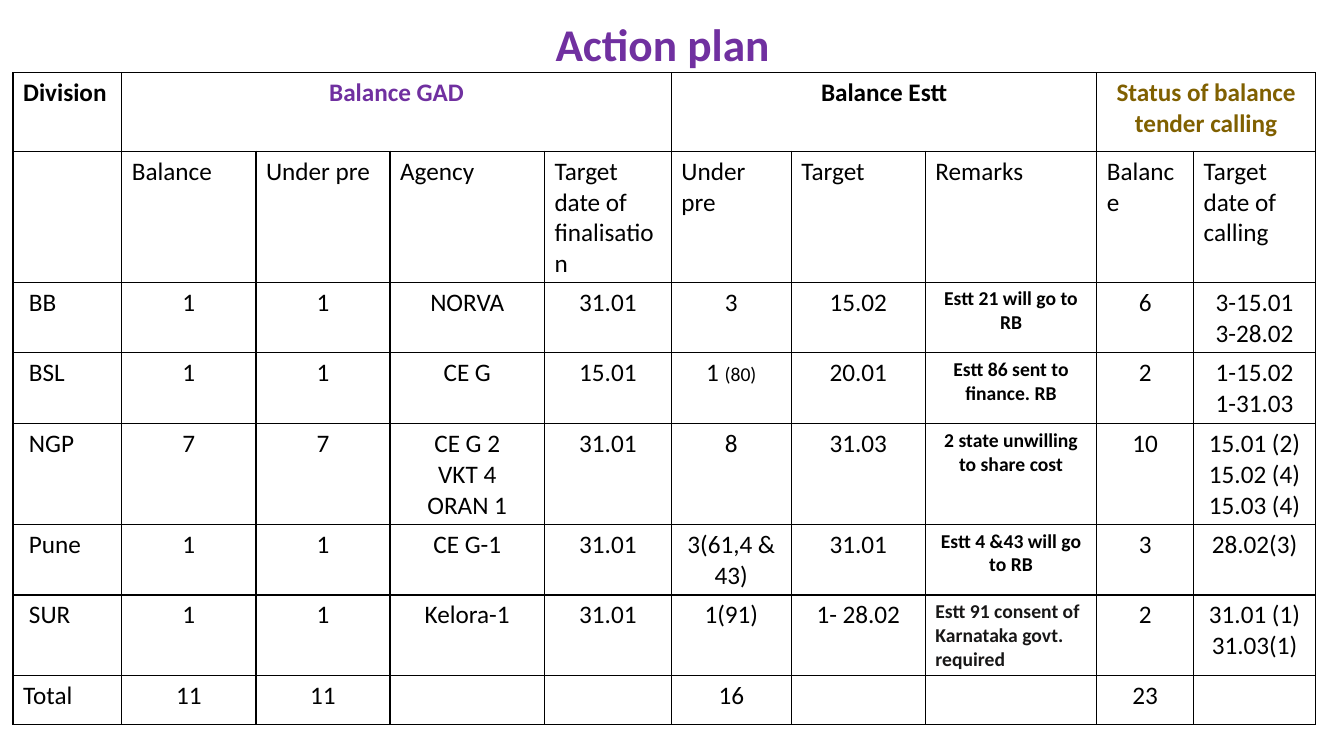
"""Build the action plan slide with its table of balance work by division."""
from pptx import Presentation
from pptx.dml.color import RGBColor
from pptx.enum.text import MSO_ANCHOR, PP_ALIGN
from pptx.oxml import parse_xml
from pptx.oxml.ns import nsdecls
from pptx.util import Cm, Pt


def style(paragraph, size, color="000000", bold=False, align=PP_ALIGN.CENTER):
    paragraph.alignment = align
    font = paragraph.font
    font.name, font.size, font.bold = "Calibri", Pt(size), bold
    font.color.rgb = RGBColor.from_string(color)


def draw_borders(cell):
    for side in ("lnL", "lnR", "lnT", "lnB"):
        cell._tc.get_or_add_tcPr().append(parse_xml(
            f'<a:{side} {nsdecls("a")} w="12700"><a:solidFill>'
            f'<a:srgbClr val="000000"/></a:solidFill></a:{side}>'))


deck = Presentation()
deck.slide_width, deck.slide_height = Cm(33.87), Cm(19.05)
page = deck.slides.add_slide(deck.slide_layouts[6])

title = page.shapes.add_textbox(Cm(0.99), Cm(0.3), Cm(31.42), Cm(1.78)).text_frame
title.word_wrap = True
title.vertical_anchor = MSO_ANCHOR.MIDDLE
title.text = "Action plan"
title.paragraphs[0].line_spacing = 0.9
style(title.paragraphs[0], 32.4, "7030A0", True)

column_widths = [2.74, 3.38, 3.38, 3.89, 3.2, 3.02, 3.38, 4.32, 2.44, 3.07]
row_heights = [1.98, 3.23, 1.73, 1.73, 2.49, 1.73, 1.78, 1.24]
groups = [
    ("Division", 0, 0, "000000"),
    ("Balance GAD", 1, 4, "7030A0"),
    ("Balance Estt", 5, 7, "000000"),
    ("Status of balance tender calling", 8, 9, "806000"),
]
rows = [
    ["", "Balance", "Under pre", "Agency", "Target date of finalisation",
     "Under pre", "Target", "Remarks", "Balance", "Target date of calling"],
    ["BB", "1", "1", "NORVA", "31.01", "3", "15.02",
     "Estt 21 will go to RB", "6", "3-15.01\n3-28.02"],
    ["BSL", "1", "1", "CE G", "15.01", "1 (80)", "20.01",
     "Estt 86 sent to finance. RB", "2", "1-15.02\n1-31.03"],
    ["NGP", "7", "7", "CE G 2\nVKT 4\nORAN 1", "31.01", "8", "31.03",
     "2 state unwilling to share cost", "10", "15.01 (2)\n15.02 (4)\n15.03 (4)"],
    ["Pune", "1", "1", "CE G-1", "31.01", "3(61,4 & 43)", "31.01",
     "Estt 4 &43 will go to RB", "3", "28.02(3)"],
    ["SUR", "1", "1", "Kelora-1", "31.01", "1(91)", "1- 28.02",
     "Estt 91 consent of Karnataka govt. required", "2", "31.01 (1)\n31.03(1)"],
    ["Total", "11", "11", "", "", "16", "", "", "23", ""],
]
heading_row, total_row, remarks_column = 1, len(rows), 7

table = page.shapes.add_table(
    len(row_heights), len(column_widths), Cm(0.33), Cm(1.83),
    Cm(sum(column_widths)), Cm(sum(row_heights))).table
table.first_row = table.horz_banding = False
for column, width in zip(table.columns, column_widths):
    column.width = Cm(width)
for row, height in zip(table.rows, row_heights):
    row.height = Cm(height)
for cell in table.iter_cells():
    draw_borders(cell)
    cell.fill.solid()
    cell.fill.fore_color.rgb = RGBColor.from_string("FFFFFF")

for name, first, last, color in groups:
    cell = table.cell(0, first)
    if last > first:
        cell.merge(table.cell(0, last))
    cell.text = name
    style(cell.text_frame.paragraphs[0], 18, color, True,
          PP_ALIGN.CENTER if first else PP_ALIGN.LEFT)

for row_number, texts in enumerate(rows, start=1):
    for column_number, text in enumerate(texts):
        cell = table.cell(row_number, column_number)
        cell.text = text
        is_division = column_number == 0 and row_number != total_row
        if is_division:
            cell.margin_left = Cm(0.4)
        is_remark = column_number == remarks_column and heading_row < row_number < total_row
        is_long = is_remark and len(text) > 40
        is_left = row_number == heading_row or column_number == 0 or is_long
        for paragraph in cell.text_frame.paragraphs:
            style(paragraph, 14 if is_remark else 18, "181717" if is_long else "000000",
                  is_remark, PP_ALIGN.LEFT if is_left else PP_ALIGN.CENTER)

estt_note = table.cell(3, 5).text_frame.paragraphs[0]
estt_note.runs[0].text = "1 "
span = estt_note.add_run()
span.text = "(80)"
span.font.size = Pt(14)

deck.save("out.pptx")
